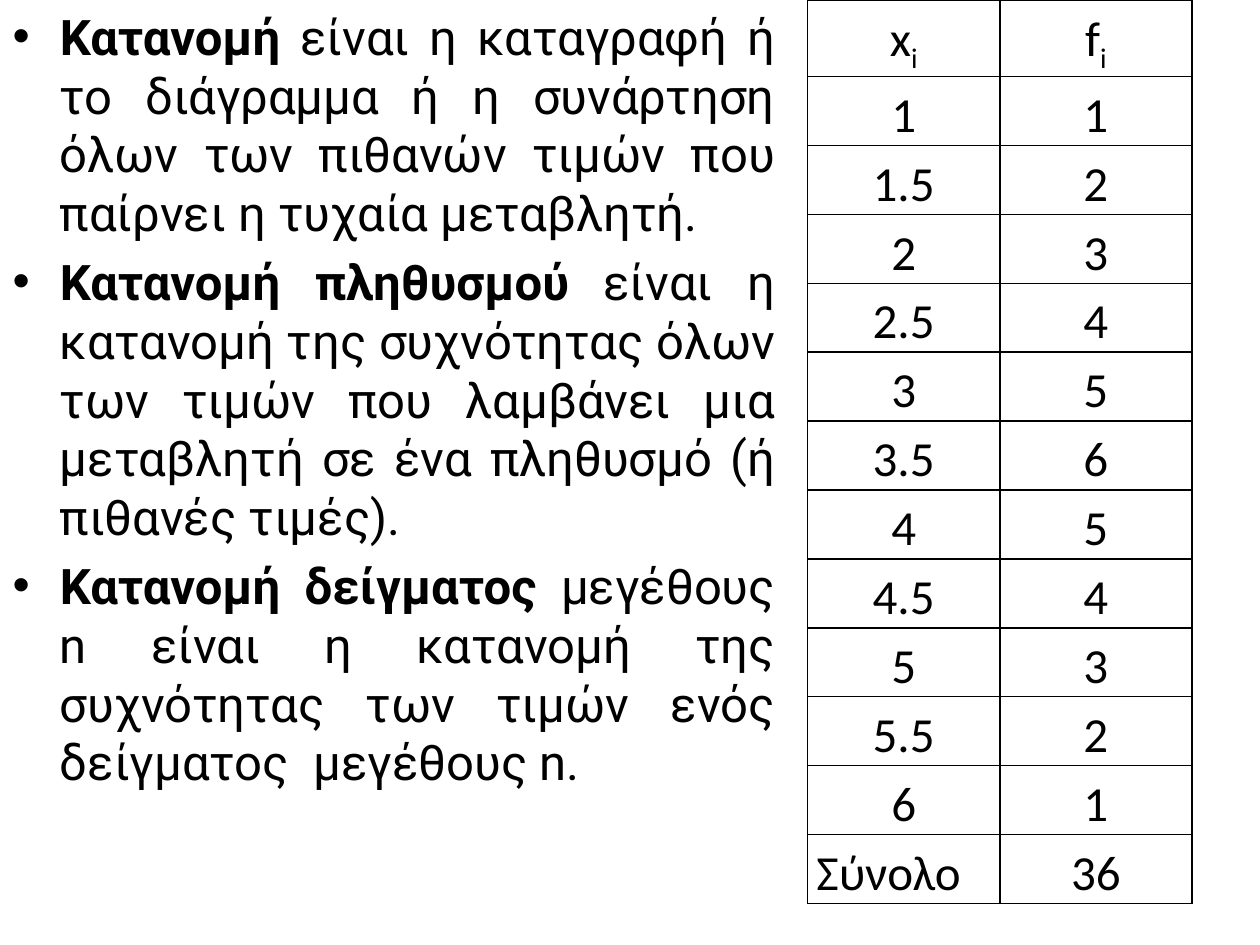
"""Build a slide that defines distributions beside a frequency table."""
from typing import NamedTuple

from lxml.etree import SubElement
from pptx import Presentation
from pptx.dml.color import RGBColor
from pptx.enum.text import MSO_ANCHOR, MSO_AUTO_SIZE, PP_ALIGN
from pptx.oxml.ns import qn
from pptx.util import Inches, Pt

BLACK = RGBColor(0x00, 0x00, 0x00)
TEXT_SIZE = Pt(28)
BODY_FONT = "Roboto"
TABLE_FONT = "Calibri"
TABLE_HEIGHT = 6.98


class Definition(NamedTuple):
    term: str
    meaning: str


class Row(NamedTuple):
    value: str
    frequency: str
    subscript: str = ""
    value_alignment: PP_ALIGN = PP_ALIGN.CENTER


DEFINITIONS = [
    Definition("Κατανομή", " είναι η καταγραφή ή το διάγραμμα ή η συνάρτηση όλων "
               "των πιθανών τιμών που παίρνει η τυχαία μεταβλητή."),
    Definition("Κατανομή πληθυσμού ", "είναι η κατανομή της συχνότητας όλων των τιμών "
               "που λαμβάνει μια μεταβλητή σε ένα πληθυσμό (ή πιθανές τιμές)."),
    Definition("Κατανομή δείγματος ", "μεγέθους n είναι η κατανομή της συχνότητας "
               "των τιμών ενός δείγματος  μεγέθους n."),
]
FREQUENCIES = [1, 2, 3, 4, 5, 6, 5, 4, 3, 2, 1]
ROWS = [
    Row("x", "f", subscript="i"),
    *(Row(f"{1 + index / 2:g}", str(count)) for index, count in enumerate(FREQUENCIES)),
    Row("Σύνολο", str(sum(FREQUENCIES)), value_alignment=PP_ALIGN.LEFT),
]


def add_span(para, text: str, font_name: str, bold: bool = False):
    span = para.add_run()
    span.text = text
    span.font.name = font_name
    span.font.size = TEXT_SIZE
    span.font.bold = bold
    span.font.color.rgb = BLACK
    return span


def fill_body(body, definitions: list[Definition]) -> None:
    body.left, body.top = Inches(0), Inches(0)
    body.width, body.height = Inches(6.25), Inches(7.5)
    frame = body.text_frame
    frame.word_wrap = True
    frame.auto_size = MSO_AUTO_SIZE.NONE
    for index, definition in enumerate(definitions):
        para = frame.add_paragraph() if index else frame.paragraphs[0]
        para.alignment = PP_ALIGN.JUSTIFY
        if index == 0:
            para.space_before = Pt(0)
        add_span(para, definition.term, BODY_FONT, bold=True)
        add_span(para, definition.meaning, BODY_FONT)


def add_borders(cell) -> None:
    properties = cell._tc.get_or_add_tcPr()
    for side in ("a:lnL", "a:lnR", "a:lnT", "a:lnB"):
        line = SubElement(properties, qn(side), w=str(Pt(1)))
        fill = SubElement(line, qn("a:solidFill"))
        SubElement(fill, qn("a:srgbClr"), val=str(BLACK))


def fill_cell(cell, text: str, subscript: str, alignment: PP_ALIGN) -> None:
    add_borders(cell)
    cell.fill.background()
    cell.vertical_anchor = MSO_ANCHOR.BOTTOM
    cell.margin_left = cell.margin_right = Inches(0.07)
    cell.margin_top = cell.margin_bottom = Inches(0)
    para = cell.text_frame.paragraphs[0]
    para.alignment = alignment
    para.line_spacing = 1.15
    add_span(para, text, TABLE_FONT)
    if subscript:
        span = add_span(para, subscript, TABLE_FONT)
        span.font._element.set("baseline", "-25000")


def add_frequency_table(page, rows: list[Row]) -> None:
    table = page.shapes.add_table(len(rows), 2, Inches(6.41), Inches(0),
                                  Inches(3.05), Inches(TABLE_HEIGHT)).table
    table.first_row = False
    table.horz_banding = False
    for index, row in enumerate(rows):
        fill_cell(table.cell(index, 0), row.value, row.subscript, row.value_alignment)
        fill_cell(table.cell(index, 1), row.frequency, row.subscript, PP_ALIGN.CENTER)


def main() -> None:
    deck = Presentation()
    deck.slide_width, deck.slide_height = Inches(10), Inches(7.5)
    page = deck.slides.add_slide(deck.slide_layouts[1])
    title = page.shapes.title._element
    title.getparent().remove(title)
    fill_body(page.placeholders[1], DEFINITIONS)
    add_frequency_table(page, ROWS)
    deck.save("out.pptx")


if __name__ == "__main__":
    main()
